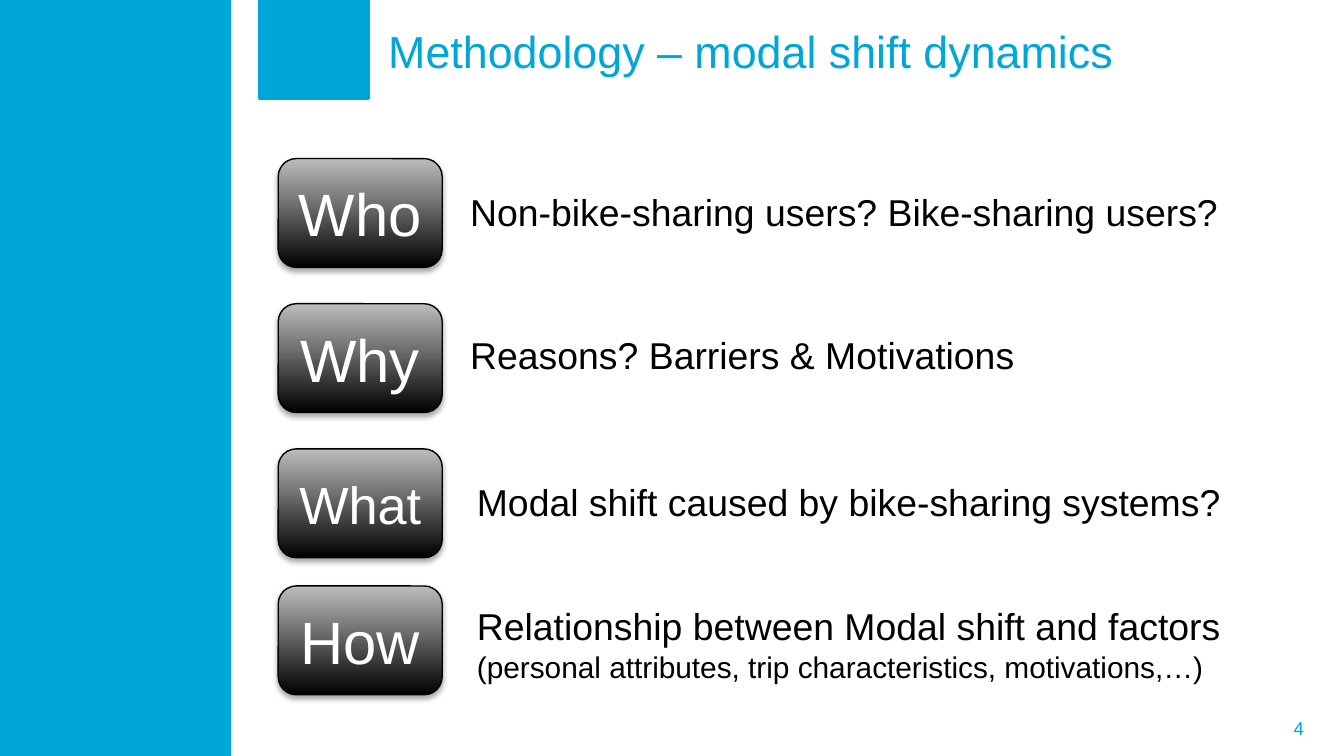
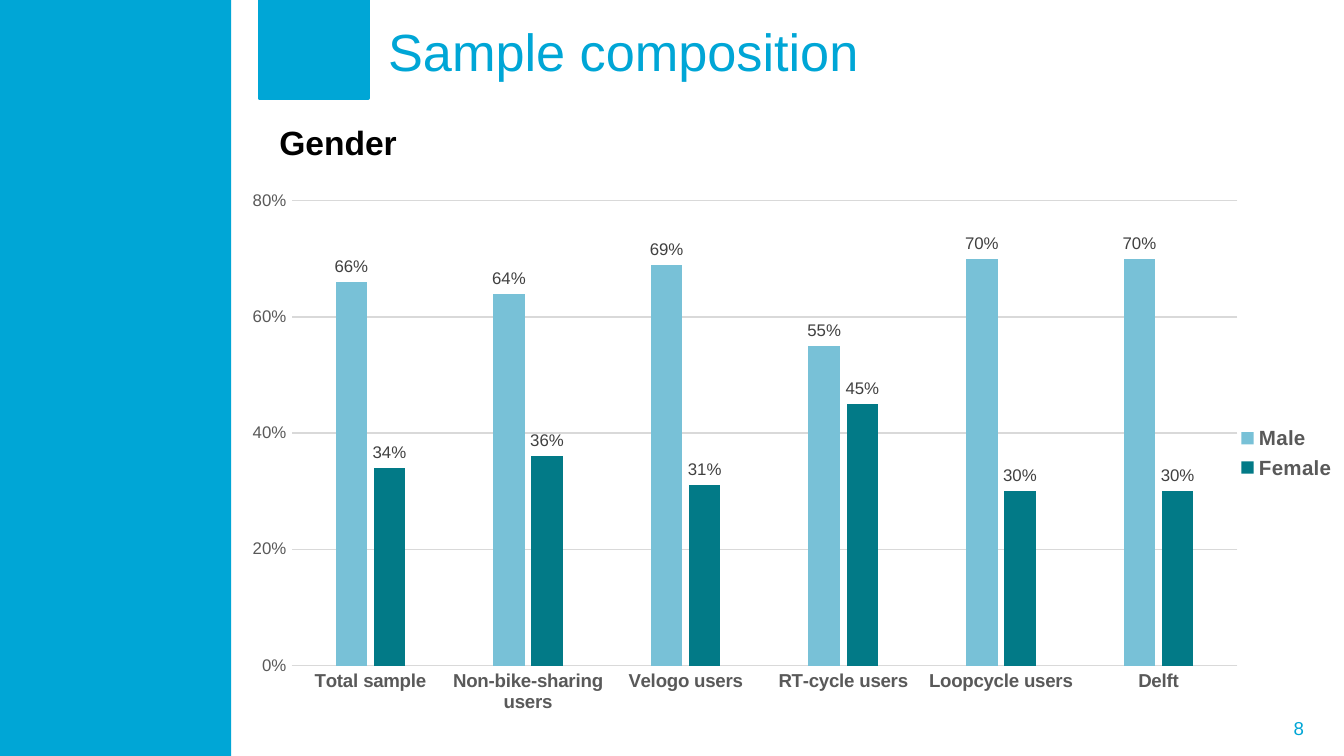
from typing import NamedTuple

from lxml.etree import SubElement
from pptx import Presentation
from pptx.chart.data import CategoryChartData
from pptx.dml.color import RGBColor
from pptx.enum.chart import (XL_CHART_TYPE, XL_LABEL_POSITION,
                             XL_LEGEND_POSITION, XL_TICK_MARK)
from pptx.enum.shapes import MSO_SHAPE
from pptx.enum.text import MSO_ANCHOR, PP_ALIGN
from pptx.oxml import parse_xml
from pptx.oxml.ns import nsdecls, qn
from pptx.util import Inches, Pt

FONT = "Arial"
COLORS = {
    "brand": "00A6D6", "text": "000000", "white": "FFFFFF",
    "badge_dark": "000000", "badge_light": "BDBDBD",
    "male": "78C1D7", "female": "027A87",
    "axis": "595959", "label": "404040", "grid": "D9D9D9",
}

# The grid: 100 columns by 56.25 rows of square cells
SLIDE_W, SLIDE_H = Inches(10), Inches(5.625)
COLS, ROWS = 100, 56.25
CELL = SLIDE_W / COLS


class Box(NamedTuple):
    """A region of the slide in grid columns and rows."""
    x: float
    y: float
    w: float
    h: float

    def inner(self, x, y, w, h):
        return Box(self.x + x, self.y + y, w, h)

    def emu(self):
        return [round(v * CELL) for v in self]


PAGE = Box(0, 0, COLS, ROWS)
HEADER = Box(19.3, 0, 78.1, 7.3)
QUESTIONS = Box(20.7, 11.8, 76.8, 39.9)
GENDER = Box(17.9, 8.6, 82.5, 45.4)


def rgb(name):
    return RGBColor.from_string(COLORS[name])


def style(font, size, color, bold=False):
    font.name, font.size, font.bold = FONT, Pt(size), bold
    font.color.rgb = rgb(color)


def write(sp, runs, color, align=PP_ALIGN.LEFT, anchor=MSO_ANCHOR.TOP,
          bold=False, wrap=True):
    """Fill a shape with one paragraph of (text, size) runs."""
    tf = sp.text_frame
    tf.word_wrap, tf.vertical_anchor = wrap, anchor
    p = tf.paragraphs[0]
    p.alignment = align
    for text, size in runs:
        r = p.add_run()
        r.text = text
        style(r.font, size, color, bold)


def add_text(s, box, runs, color="text", **options):
    write(s.shapes.add_textbox(*box.emu()), runs, color, **options)


def add_block(s, box, line_width=None):
    """Plain rectangle in the brand colour."""
    sp = s.shapes.add_shape(MSO_SHAPE.RECTANGLE, *box.emu())
    sp.shadow.inherit = False
    sp.fill.solid()
    sp.fill.fore_color.rgb = rgb("brand")
    if line_width:
        sp.line.color.rgb = rgb("brand")
        sp.line.width = Pt(line_width)
    else:
        sp.line.fill.background()


def add_frame(s, page, number):
    """Side band and page number."""
    add_text(s, page.inner(72.7, 52.7, 25.3, 3), [(number, 10)], "brand",
             align=PP_ALIGN.RIGHT, anchor=MSO_ANCHOR.MIDDLE)
    add_block(s, page.inner(0, 0, 17.2, page.h))


def add_header(s, box, title, size):
    """Square tab and slide title."""
    add_block(s, box.inner(0, 0, 8.1, box.h), line_width=2)
    add_text(s, box.inner(8.6, 0.6, box.w - 8.6, 6.3), [(title, size)],
             "brand", anchor=MSO_ANCHOR.MIDDLE)


def add_badge(s, box, word, size):
    """Rounded badge with a dark gradient and a soft shadow."""
    sp = s.shapes.add_shape(MSO_SHAPE.FLOWCHART_ALTERNATE_PROCESS, *box.emu())
    sp.fill.gradient()
    sp.fill.gradient_angle = 90
    for stop, color in zip(sp.fill.gradient_stops,
                           ("badge_dark", "badge_light")):
        stop.color.rgb = rgb(color)
    sp.line.color.rgb = rgb("badge_dark")
    sp.line.width = Pt(0.75)
    sp.shadow.inherit = False
    effects = sp._element.spPr.find(qn("a:effectLst"))
    effects.append(parse_xml(
        f'<a:outerShdw {nsdecls("a")} blurRad="{Pt(3.1)}" dist="{Pt(1.8)}" '
        'dir="5400000" rotWithShape="0">'
        f'<a:srgbClr val="{COLORS["badge_dark"]}"><a:alpha val="35000"/>'
        '</a:srgbClr></a:outerShdw>'))
    write(sp, [(word, size)], "white", align=PP_ALIGN.CENTER,
          anchor=MSO_ANCHOR.MIDDLE, wrap=False)


def add_questions(s, box):
    """Column of badges, each with its question to the right."""
    # word, size, badge row, text column, text row, text width and height, runs
    questions = [
        ("Who", 32, 0, 13.3, 1.8, 59.2, 4.4,
         [("Non-bike-sharing users? Bike-sharing users?", 20)]),
        ("Why", 32, 10.8, 13.3, 12.4, 59.2, 4.4,
         [("Reasons? Barriers & Motivations", 20)]),
        ("What", 28, 21.6, 13.8, 23.4, 63, 4.4,
         [("Modal shift caused by bike-sharing systems?", 20)]),
        ("How", 32, 31.8, 13.8, 32.6, 59.2, 7.1,
         [("Relationship between Modal shift and factors ", 20),
          ("(personal attributes, trip characteristics, motivations,…)", 16)]),
    ]
    for word, size, row, x, y, w, h, runs in questions:
        add_badge(s, box.inner(0, row, 12.2, 8.1), word, size)
        add_text(s, box.inner(x, y, w, h), runs)


def set_plot_area(chart, x, y, w, h):
    """Fix the inner plot area as shares of the chart."""
    plot_area = chart._chartSpace.chart.plotArea
    layout = plot_area.find(qn("c:layout"))
    if layout is None:
        layout = plot_area.makeelement(qn("c:layout"))
        plot_area.insert(0, layout)
    manual = SubElement(layout, qn("c:manualLayout"))
    settings = [("layoutTarget", "inner"), ("xMode", "edge"),
                ("yMode", "edge"), ("x", x), ("y", y), ("w", w), ("h", h)]
    for tag, value in settings:
        SubElement(manual, qn(f"c:{tag}")).set("val", str(value))


def add_gender_chart(s, box):
    """Heading and clustered columns by user group."""
    add_text(s, box.inner(1.9, 0, 10.9, 4), [("Gender", 18)],
             bold=True, wrap=False)

    data = CategoryChartData(number_format="0%")
    data.categories = ["Total sample", "Non-bike-sharing users",
                       "Velogo users", "RT-cycle users", "Loopcycle users",
                       "Delft"]
    data.add_series("Male", [0.66, 0.64, 0.69, 0.55, 0.70, 0.70])
    data.add_series("Female", [0.34, 0.36, 0.31, 0.45, 0.30, 0.30])
    chart = s.shapes.add_chart(XL_CHART_TYPE.COLUMN_CLUSTERED,
                               *box.inner(0, 4.8, box.w, 40.6).emu(),
                               data).chart
    style(chart.font, 10, "text")
    chart.has_title = False
    set_plot_area(chart, 0.046, 0.038, 0.853, 0.852)

    # Columns and their labels
    plot = chart.plots[0]
    plot.gap_width, plot.overlap = 280, -21
    plot.vary_by_categories = False
    for series, color in zip(plot.series, ("male", "female")):
        series.format.fill.solid()
        series.format.fill.fore_color.rgb = rgb(color)
        labels = series.data_labels
        labels.show_value = True
        labels.position = XL_LABEL_POSITION.OUTSIDE_END
        labels.number_format, labels.number_format_is_linked = "0%", False
        style(labels.font, 9, "label")

    # Axes
    cat, val = chart.category_axis, chart.value_axis
    for axis, size, bold in ((cat, 10, True), (val, 9, False)):
        axis.major_tick_mark = axis.minor_tick_mark = XL_TICK_MARK.NONE
        style(axis.tick_labels.font, size, "axis", bold)
    val.minimum_scale, val.maximum_scale, val.major_unit = 0, 0.8, 0.2
    val.tick_labels.number_format = "0%"
    val.tick_labels.number_format_is_linked = False
    val.format.line.fill.background()
    for line in (cat.format.line, val.major_gridlines.format.line):
        line.color.rgb = rgb("grid")
        line.width = Pt(0.75)

    # Legend
    chart.has_legend = True
    chart.legend.position = XL_LEGEND_POSITION.RIGHT
    chart.legend.include_in_layout = False
    style(chart.legend.font, 11, "axis", bold=True)


def add_slide(prs, number, title, size):
    s = prs.slides.add_slide(prs.slide_layouts[6])
    add_frame(s, PAGE, number)
    add_header(s, HEADER, title, size)
    return s


def main():
    prs = Presentation()
    prs.slide_width, prs.slide_height = SLIDE_W, SLIDE_H
    add_questions(
        add_slide(prs, "4", "Methodology – modal shift dynamics", 24),
        QUESTIONS)
    add_gender_chart(add_slide(prs, "8", "Sample composition", 28), GENDER)
    prs.save("out.pptx")


if __name__ == "__main__":
    main()
